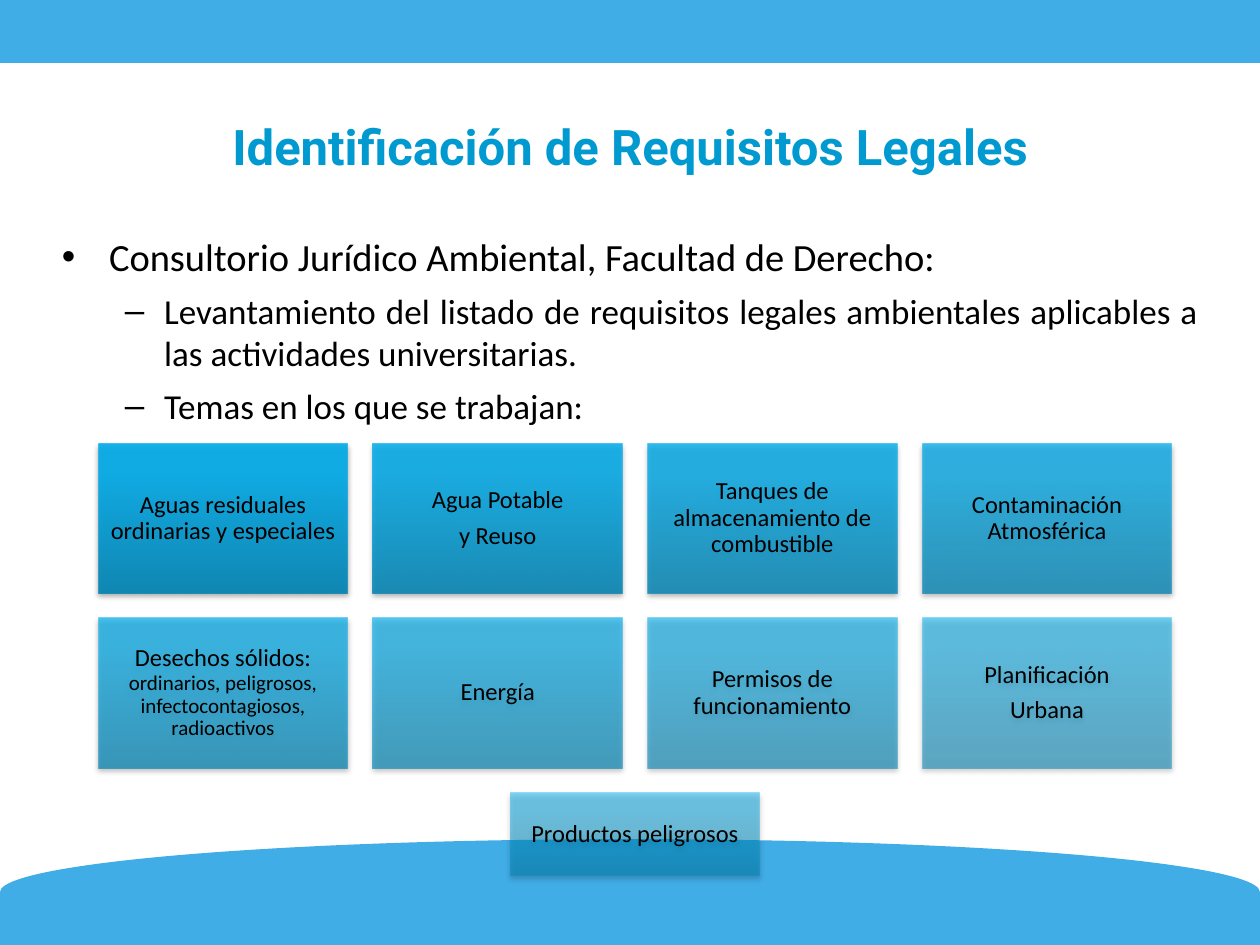
"""Build the slide on identifying legal requirements, with its grid of topics."""
from lxml import etree
from pptx import Presentation
from pptx.dml.color import RGBColor
from pptx.enum.shapes import MSO_SHAPE as SHAPE
from pptx.enum.text import MSO_ANCHOR as ANCHOR, MSO_AUTO_SIZE as AUTO, PP_ALIGN as ALIGN
from pptx.oxml import parse_xml
from pptx.oxml.ns import nsdecls, qn
from pptx.util import Inches, Pt

BAND = RGBColor(0x41, 0xAD, 0xE7)
TITLE = RGBColor(0x00, 0x9A, 0xD0)
BLACK = RGBColor(0x00, 0x00, 0x00)
DARK = RGBColor(0x00, 0x83, 0xB3)
MID = RGBColor(0x00, 0xAB, 0xE9)
LIGHT = RGBColor(0x00, 0xAB, 0xEA)

BODY = [
    (0, 22, "Consultorio Jurídico Ambiental, Facultad de Derecho:"),
    (1, 20, "Levantamiento del listado de requisitos legales ambientales "
            "aplicables a las actividades universitarias."),
    (1, 20, "Temas en los que se trabajan:"),
]
TOPICS = [
    [[("Aguas residuales ordinarias y especiales", 14)]],
    [[("Agua Potable", 14)], [("y Reuso", 14)]],
    [[("Tanques de almacenamiento de combustible", 14)]],
    [[("Contaminación Atmosférica", 14)]],
    [[("Desechos sólidos: ", 14),
      ("ordinarios, peligrosos, infectocontagiosos, radioactivos", 12)]],
    [[("Energía", 14)]],
    [[("Permisos de funcionamiento", 14)]],
    [[("Planificación", 14)], [("Urbana", 14)]],
    [[("Productos peligrosos", 14)]],
]


def add_run(p, text, size, color, name="Calibri", bold=False):
    r = p.add_run()
    r.text = text
    r.font.size = Pt(size)
    r.font.name = name
    r.font.bold = bold
    r.font.color.rgb = color


def style_tile(sp, alpha):
    sp.line.fill.background()
    sp.fill.background()
    stops = "".join(
        f'<a:gs pos="{pos * 1000}"><a:srgbClr val="{color}">'
        f'<a:alpha val="{alpha * 1000}"/></a:srgbClr></a:gs>'
        for pos, color in ((0, DARK), (80, MID), (100, LIGHT)))
    grad = parse_xml(f'<a:gradFill {nsdecls("a")} rotWithShape="1"><a:gsLst>{stops}</a:gsLst>'
                     '<a:lin ang="16200000" scaled="0"/></a:gradFill>')
    pr = sp._element.spPr
    pr.replace(pr.find(qn("a:noFill")), grad)
    effects = etree.SubElement(pr, qn("a:effectLst"))
    shadow = etree.SubElement(effects, qn("a:outerShdw"), blurRad=str(Pt(3.1)),
                              dist=str(Pt(1.8)), dir="5400000", rotWithShape="0")
    color = etree.SubElement(shadow, qn("a:srgbClr"), val=str(BLACK))
    etree.SubElement(color, qn("a:alpha"), val="35000")


prs = Presentation()
prs.slide_width, prs.slide_height = Inches(10), Inches(7.5)
s = prs.slides.add_slide(prs.slide_layouts[1])

for kind, x, y, w, h, angle in (
        (SHAPE.RECTANGLE, 0, 0, 10, 0.5, 0),
        (SHAPE.FLOWCHART_DELAY, 4.58, -2.92 + 5, 0.84, 10, 270)):
    sp = s.shapes.add_shape(kind, Inches(x), Inches(y), Inches(w), Inches(h))
    sp.rotation = angle
    sp.shadow.inherit = False
    sp.fill.solid()
    sp.fill.fore_color.rgb = BAND
    sp.line.fill.background()

title = s.shapes.title
title.left, title.top, title.width, title.height = map(Inches, (0.75, 0.67, 8.5, 0.97))
title.text_frame.vertical_anchor = ANCHOR.MIDDLE
p = title.text_frame.paragraphs[0]
p.alignment = ALIGN.CENTER
add_run(p, "Identificación de Requisitos Legales", 28, TITLE, "Roboto", True)

body = s.placeholders[1]
body.left, body.top, body.width, body.height = map(Inches, (0.39, 1.8, 9.22, 1.72))
tf = body.text_frame
tf.auto_size = AUTO.NONE
for i, (level, size, text) in enumerate(BODY):
    p = tf.add_paragraph() if i else tf.paragraphs[0]
    p.level = level
    p.alignment = ALIGN.JUSTIFY
    p.space_before = Pt(6 if i else 0)
    add_run(p, text, size, BLACK)

for i, paragraphs in enumerate(TOPICS):
    row, col = divmod(i, 4)
    x, h = (4.05, 0.66) if row == 2 else (0.78 + 2.18 * col, 1.19)
    sp = s.shapes.add_shape(SHAPE.RECTANGLE, Inches(x), Inches(3.52 + 1.385 * row),
                            Inches(1.98), Inches(h))
    style_tile(sp, 90 - 5 * i)
    tf = sp.text_frame
    tf.word_wrap = True
    tf.vertical_anchor = ANCHOR.MIDDLE
    tf.margin_left = tf.margin_right = tf.margin_top = tf.margin_bottom = Inches(0.06)
    for j, runs in enumerate(paragraphs):
        p = tf.add_paragraph() if j else tf.paragraphs[0]
        p.alignment = ALIGN.CENTER
        p.line_spacing = 0.9
        p.space_after = Pt(5)
        for text, size in runs:
            add_run(p, text, size, BLACK)

prs.save("out.pptx")
